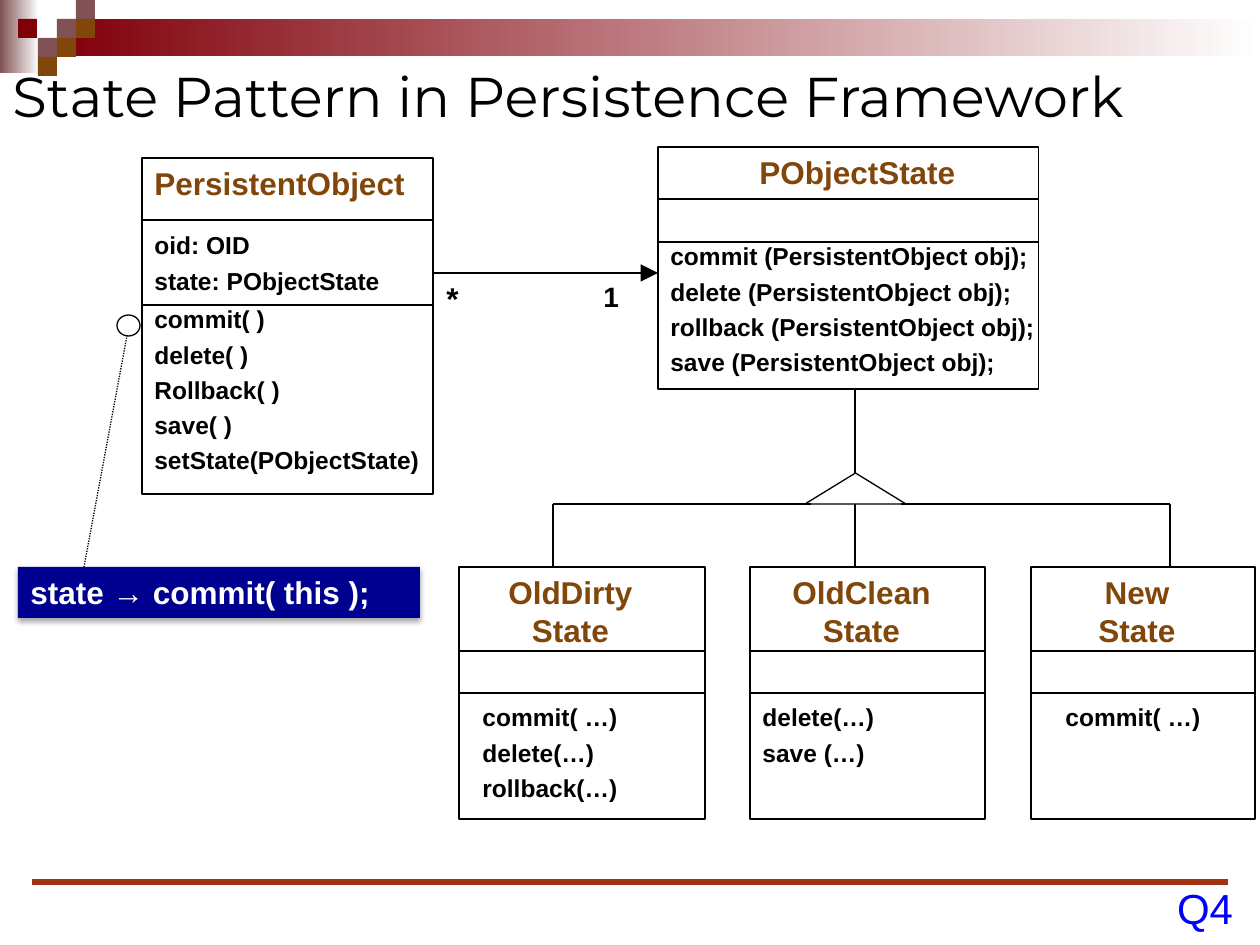
import pptx
import pptx.util
import pptx.dml.color
import pptx.enum.shapes
import pptx.enum.text
import pptx.enum.dml
import pptx.oxml
import pptx.oxml.ns

PX = 914400 / 126
HUES = {"black": "000000", "white": "FFFFFF", "wine": "80000A", "mauve": "805255",
        "brown": "81460A", "rust": "A13214", "navy": "000090", "blue": "0000FF"}

BANDS = [((0, 0, 39, 73), "mauve"), ((57, 19, 1203, 37), "wine")]
TILES = [((57, 19), "mauve"), ((76, 0), "mauve"), ((76, 19), "brown"), ((38, 38), "mauve"),
         ((18, 19), "wine"), ((57, 38), "brown"), ((38, 57), "brown")]

CLASSES = [
    {"box": (142, 158, 291, 336), "rules": (220, 305), "name": "PersistentObject",
     "head": (142, 158, 291), "align": "LEFT",
     "parts": [((142, 231, 296), ["oid: OID", "state: PObjectState"]),
               ((142, 305, 291), ["commit( )", "delete( )", "Rollback( )", "save( )",
                                  "setState(PObjectState)"])]},
    {"box": (658, 147, 381, 242), "rules": (199, 242), "name": "PObjectState",
     "head": (747, 147, 291), "align": "LEFT",
     "parts": [((658, 242, 494), ["commit (PersistentObject obj);",
                                  "delete (PersistentObject obj);",
                                  "rollback (PersistentObject obj);",
                                  "save (PersistentObject obj);"])]},
    {"box": (459, 567, 246, 252), "rules": (651, 693), "name": "OldDirty State",
     "head": (481, 567, 179), "align": "CENTER",
     "parts": [((470, 703, 236), ["commit( …)", "delete(…)", "rollback(…)"])]},
    {"box": (750, 567, 235, 252), "rules": (651, 693), "name": "OldClean State",
     "head": (772, 567, 179), "align": "CENTER",
     "parts": [((750, 703, 236), ["delete(…)", "save (…)"])]},
    {"box": (1031, 567, 224, 252), "rules": (651, 693), "name": "New State",
     "head": (1064, 567, 146), "align": "CENTER",
     "parts": [((1053, 703, 236), ["commit( …)"])]},
]
TREE = [(855, 473, 855, 389), (811, 504, 553, 504), (901, 504, 1170, 504),
        (553, 504, 553, 567), (1170, 504, 1170, 567), (855, 504, 855, 567)]
ENDS = [("*", (434, 273, 45, 50), 18), ("1", (591, 273, 57, 47), 16)]

deck = pptx.Presentation()
deck.slide_width = pptx.util.Inches(10)
deck.slide_height = pptx.util.Inches(7.5)
slide = deck.slides.add_slide(deck.slide_layouts[6])
Kind = pptx.enum.shapes.MSO_SHAPE


def emu(nums):
    return [round(n * PX) for n in nums]


def hue(name):
    return pptx.dml.color.RGBColor.from_string(HUES[name])


def shape(kind, box, fill, line=None):
    item = slide.shapes.add_shape(kind, *emu(box))
    item.shadow.inherit = False
    item.fill.solid()
    item.fill.fore_color.rgb = hue(fill)
    if line:
        item.line.color.rgb = hue(line)
        item.line.width = pptx.util.Pt(0.75)
    else:
        item.line.fill.background()
    return item


def rule(ends, tone="black", width=0.75):
    item = slide.shapes.add_connector(pptx.enum.shapes.MSO_CONNECTOR.STRAIGHT, *emu(ends))
    item.line.color.rgb = hue(tone)
    item.line.width = pptx.util.Pt(width)
    pptx.oxml.ns.qn("a:effectLst")
    item._element.spPr.append(pptx.oxml.parse_xml(
        f'<a:effectLst {pptx.oxml.ns.nsdecls("a")}/>'))
    return item


def write(item, lines, size, tone, bold=True, align="LEFT", font="Arial", tight=False,
          anchor="TOP"):
    frame = item.text_frame
    frame.word_wrap = True
    frame.vertical_anchor = getattr(pptx.enum.text.MSO_ANCHOR, anchor)
    frame.text = "\n".join(lines)
    for i, para in enumerate(frame.paragraphs):
        para.alignment = getattr(pptx.enum.text.PP_ALIGN, align)
        if tight:
            para.line_spacing = 0.75
            para.space_before = pptx.util.Pt(7.5 if i else 0)
        for run in para.runs:
            run.font.size = pptx.util.Pt(size)
            run.font.name = font
            run.font.bold = bold
            run.font.color.rgb = hue(tone)
    return frame


def label(box, *args, **opts):
    return write(slide.shapes.add_textbox(*emu(box)), *args, **opts)


for box, tone in BANDS:
    fill = shape(Kind.RECTANGLE, box, tone).fill
    fill.gradient()
    fill.gradient_angle = 0
    for stop, shade, spot in zip(fill.gradient_stops, (tone, "white"), (0, 1)):
        stop.color.rgb = hue(shade)
        stop.position = spot
for spot, tone in TILES:
    shape(Kind.RECTANGLE, (*spot, 19, 19), tone)
rule((32, 882, 1228, 882), "rust", 3)
label((0, 53, 1260, 84), ["State Pattern in Persistence Framework"], 32, "black",
      bold=False, font="Montserrat", anchor="MIDDLE")

link = rule((129, 325, 84, 567))
link.line.dash_style = pptx.enum.dml.MSO_LINE.ROUND_DOT
note = shape(Kind.RECTANGLE, (18, 567, 402, 51), "navy")
write(note, ["state → commit( this );"], 18, "white")
glow = note._element.spPr.find(pptx.oxml.ns.qn("a:effectLst"))
glow.append(pptx.oxml.parse_xml(
    f'<a:outerShdw {pptx.oxml.ns.nsdecls("a")} blurRad="39370" dist="22860" dir="5400000" '
    f'rotWithShape="0"><a:srgbClr val="{HUES["black"]}"><a:alpha val="35000"/></a:srgbClr>'
    '</a:outerShdw>'))
shape(Kind.OVAL, (117, 315, 23, 21), "white", "black")

for cls in CLASSES:
    left, top, width, high = cls["box"]
    shape(Kind.RECTANGLE, cls["box"], "white", "black")
    label((*cls["head"], 50), [cls["name"]], 18, "brown", align=cls["align"])
    for y in cls["rules"]:
        rule((left, y, left + width, y))
    for spot, lines in cls["parts"]:
        x, y, wide = spot
        label((x, y, wide, 36 * len(lines)), lines, 14, "black", tight=True)

shape(Kind.ISOSCELES_TRIANGLE, (805, 473, 101, 31), "white", "black")
for ends in TREE:
    rule(ends)
arrow = rule((434, 273, 658, 273))
arrow.line._get_or_add_ln().append(pptx.oxml.parse_xml(
    f'<a:tailEnd {pptx.oxml.ns.nsdecls("a")} type="triangle" w="lg" len="lg"/>'))
for word, box, size in ENDS:
    label(box, [word], size, "black")

mark = label((1177, 883, 57, 50), ["Q4"], 24, "blue", bold=False, anchor="MIDDLE")
mark.word_wrap = False
mark.margin_left = mark.margin_right = mark.margin_top = mark.margin_bottom = 0

deck.save("out.pptx")
